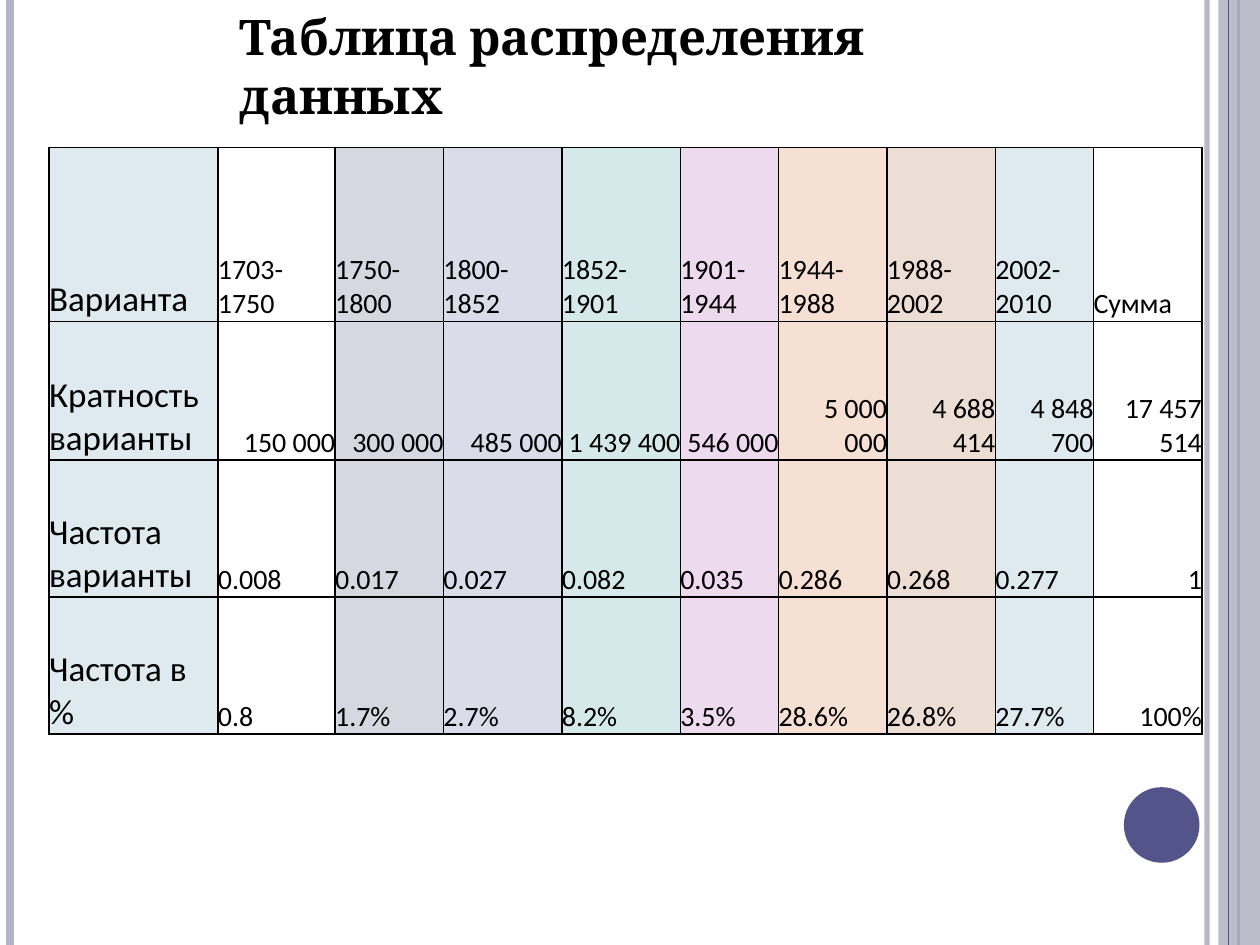
import pptx
import pptx.util
import pptx.dml.color
import pptx.enum.shapes
import pptx.enum.text
import pptx.oxml.ns
from lxml import etree

NS = pptx.oxml.ns.qn
ALIGN = pptx.enum.text.PP_ALIGN
ANCHOR = pptx.enum.text.MSO_ANCHOR


def rgb(value):
    return pptx.dml.color.RGBColor.from_string(value)


def set_alpha(fill_element, percent):
    color = fill_element.find(".//" + NS("a:srgbClr"))
    etree.SubElement(color, NS("a:alpha"), val=str(percent * 1000))


class Deck:
    """Style and current slide; lengths are percentages of the slide's size."""

    ink, accent, pale = "000000", "53548A", "B3B4C4"
    title_font, body_font = "Cambria", "Calibri"

    def __init__(self, width, height):
        self.prs = pptx.Presentation()
        self.prs.slide_width = pptx.util.Inches(width)
        self.prs.slide_height = pptx.util.Inches(height)
        self.s = self.prs.slides.add_slide(self.prs.slide_layouts[5])

    def x(self, share):
        return round(self.prs.slide_width * share / 100)

    def y(self, share):
        return round(self.prs.slide_height * share / 100)

    def box(self, left, top, width, height):
        return self.x(left), self.y(top), self.x(width), self.y(height)

    def font(self, p, name, size, bold=False):
        p.font.name, p.font.size, p.font.bold = name, pptx.util.Pt(size), bold
        p.font.color.rgb = rgb(self.ink)

    def title(self, text, *box):
        sp = self.s.shapes.title
        sp.left, sp.top, sp.width, sp.height = self.box(*box)
        tf = sp.text_frame
        tf.text = text
        tf.word_wrap = True
        tf.auto_size = pptx.enum.text.MSO_AUTO_SIZE.SHAPE_TO_FIT_TEXT
        tf.vertical_anchor = ANCHOR.TOP
        p = tf.paragraphs[0]
        p.alignment = ALIGN.LEFT
        self.font(p, self.title_font, 28, bold=True)

    def vertical_line(self, left, color, weight, alpha=100):
        line = self.s.shapes.add_connector(
            pptx.enum.shapes.MSO_CONNECTOR.STRAIGHT,
            self.x(left), 0, self.x(left), self.y(100))
        line.line.color.rgb = rgb(color)
        line.line.width = pptx.util.Pt(weight)
        sp_pr = line._element.spPr
        if alpha < 100:
            set_alpha(sp_pr, alpha)
        etree.SubElement(sp_pr, NS("a:effectLst"))

    def shape(self, kind, color, *box, alpha=100):
        sp = self.s.shapes.add_shape(kind, *self.box(*box))
        sp.shadow.inherit = False
        sp.fill.solid()
        sp.fill.fore_color.rgb = rgb(color)
        sp.line.fill.background()
        if alpha < 100:
            set_alpha(sp._element.spPr, alpha)

    def borders(self, cell):
        tc_pr = cell._tc.get_or_add_tcPr()
        for i, side in enumerate("LRTB"):
            ln = etree.Element(NS("a:ln" + side), w=str(pptx.util.Pt(1)))
            fill = etree.SubElement(ln, NS("a:solidFill"))
            etree.SubElement(fill, NS("a:srgbClr"), val=self.ink)
            tc_pr.insert(i, ln)

    def cell(self, cell, text, size, color, alignment):
        cell.text = text
        cell.vertical_anchor = ANCHOR.BOTTOM
        cell.margin_left = cell.margin_right = 0
        cell.margin_top = cell.margin_bottom = 0
        if color:
            cell.fill.solid()
            cell.fill.fore_color.rgb = rgb(color)
        else:
            cell.fill.background()
        p = cell.text_frame.paragraphs[0]
        p.alignment = alignment
        self.font(p, self.body_font, size)
        self.borders(cell)

    def table(self, rows, fills, left, top, widths, heights):
        table = self.s.shapes.add_table(
            len(rows), len(widths),
            *self.box(left, top, sum(widths), sum(heights))).table
        table.first_row = table.horz_banding = False
        for column, width in zip(table.columns, widths):
            column.width = self.x(width)
        for row, height in zip(table.rows, heights):
            row.height = self.y(height)
        last = len(widths) - 1
        for r, row in enumerate(rows):
            for c, text in enumerate(row):
                # Counts and totals are set to the right
                right = (r == 1 and c > 0) or (r > 0 and c == last)
                self.cell(table.cell(r, c), text, 16 if c else 20, fills[c],
                          ALIGN.RIGHT if right else ALIGN.LEFT)


def main():
    deck = Deck(10, 7.5)
    kinds = pptx.enum.shapes.MSO_SHAPE

    # Side bands and circle
    deck.vertical_line(95.8, deck.pale, 3, alpha=93)
    deck.vertical_line(0.8, deck.pale, 4.5)
    deck.vertical_line(98.3, deck.accent, 1.5)
    deck.shape(kinds.RECTANGLE, deck.pale, 96.7, 0, 3.3, 100, alpha=87)
    deck.vertical_line(97.5, deck.accent, 0.75)
    deck.shape(kinds.OVAL, deck.accent, 89.2, 83.3, 6, 8)

    # Distribution table
    rows = [
        ["Варианта", "1703-1750", "1750-1800", "1800-1852", "1852-1901",
         "1901-1944", "1944-1988", "1988-2002", "2002-2010", "Сумма"],
        ["Кратность варианты", "150 000", "300 000", "485 000", "1 439 400",
         "546 000", "5 000 000", "4 688 414", "4 848 700", "17 457 514"],
        ["Частота варианты", "0.008", "0.017", "0.027", "0.082",
         "0.035", "0.286", "0.268", "0.277", "1"],
        ["Частота в %", "0.8", "1.7%", "2.7%", "8.2%",
         "3.5%", "28.6%", "26.8%", "27.7%", "100%"],
    ]
    fills = ["DEE9F0", "FFFFFF", "D6D7E0", "DBDBE9", "D6E9EA",
             "EDDAEE", "F5E0D3", "ECDED4", "DEE9F0", None]
    widths = [13.4, 9.3, 8.6, 9.4, 9.4, 7.8, 8.6, 8.6, 7.8, 8.6]
    deck.table(rows, fills, 3.9, 15.6, widths, [18.4, 14.7, 14.5, 14.5])

    # Title
    deck.title("Таблица распределения данных", 18, 0, 68, 7.6)

    deck.prs.save("out.pptx")


if __name__ == "__main__":
    main()
